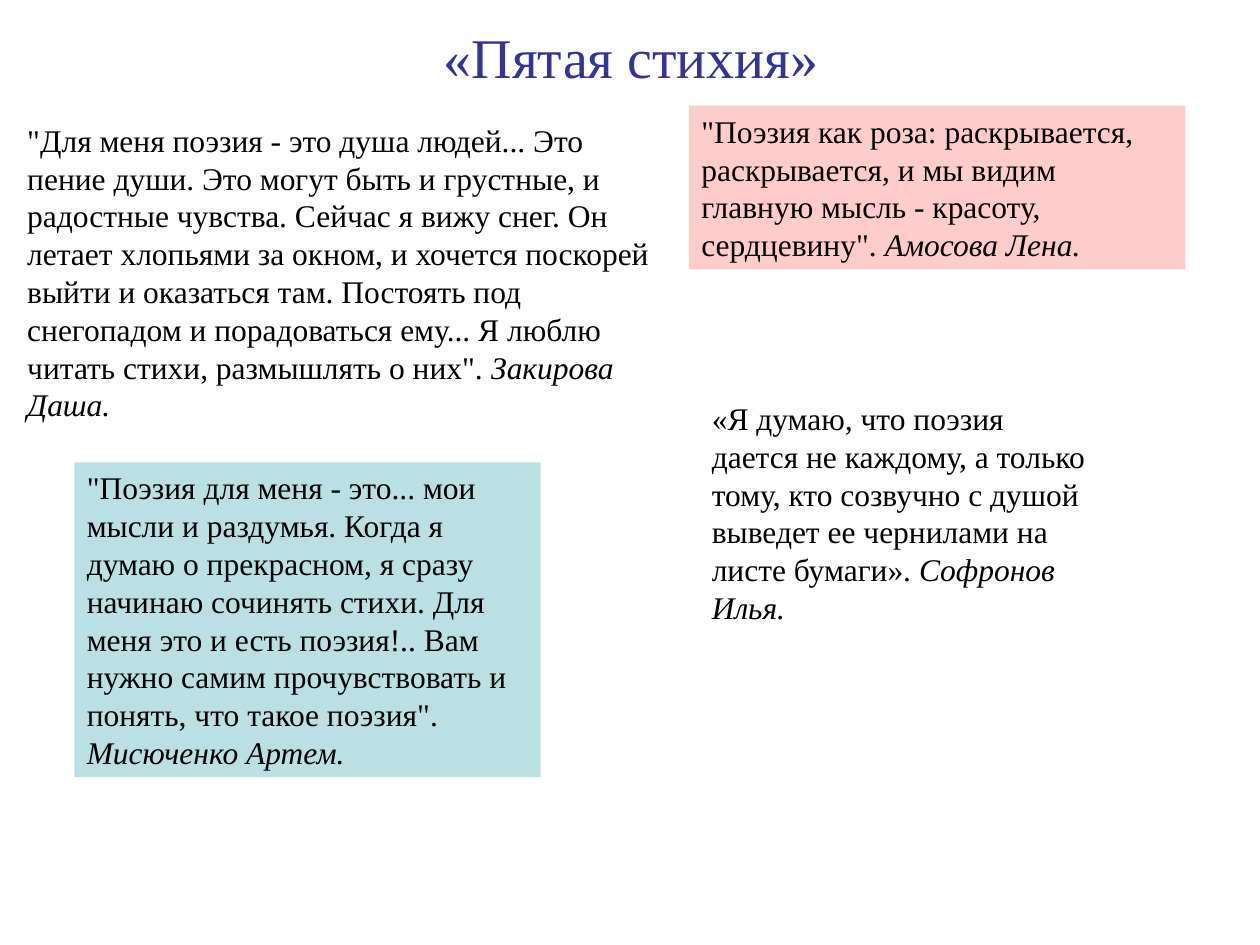
import pptx
import pptx.util
import pptx.dml.color
import pptx.enum.shapes
import pptx.enum.text
from dataclasses import dataclass

Cm = pptx.util.Cm
RGB = pptx.dml.color.RGBColor.from_string
Align = pptx.enum.text.PP_ALIGN
Anchor = pptx.enum.text.MSO_ANCHOR


@dataclass(frozen=True)
class Theme:
    """Fonts, type sizes and colours of the slide."""
    font: str = "Times New Roman"
    head: int = 32
    body: int = 18
    title: str = "333399"
    ink: str = "000000"
    rose: str = "FFCCCC"
    teal: str = "BBE0E3"
    white: str = "FFFFFF"


THEME = Theme()


def add_run(para, text, size, tint, slant=False):
    """Add one styled run to a paragraph."""
    run = para.add_run()
    run.text = text
    run.font.name = THEME.font
    run.font.size = pptx.util.Pt(size)
    run.font.italic = slant
    run.font.color.rgb = RGB(tint)


def add_title(slide, text, area):
    """Add the centred slide title."""
    frame = slide.shapes.add_textbox(*map(Cm, area)).text_frame
    frame.word_wrap = True
    frame.vertical_anchor = Anchor.MIDDLE
    para = frame.paragraphs[0]
    para.alignment = Align.CENTER
    add_run(para, text, THEME.head, THEME.title)


def add_quote(slide, text, name, area, fill=None):
    """Add a quote with its author in italics, on a filled box if asked."""
    place = [Cm(x) for x in area]
    if fill:
        kind = pptx.enum.shapes.MSO_SHAPE.RECTANGLE
        box = slide.shapes.add_shape(kind, *place)
        box.shadow.inherit = False
        box.fill.solid()
        box.fill.fore_color.rgb = RGB(fill)
        box.line.fill.background()
    else:
        box = slide.shapes.add_textbox(*place)
    frame = box.text_frame
    frame.word_wrap = True
    frame.auto_size = pptx.enum.text.MSO_AUTO_SIZE.SHAPE_TO_FIT_TEXT
    frame.vertical_anchor = Anchor.TOP
    para = frame.paragraphs[0]
    para.alignment = Align.LEFT
    add_run(para, text + " ", THEME.body, THEME.ink)
    add_run(para, name, THEME.body, THEME.ink, True)


def main():
    """Build and save the slide."""
    deck = pptx.Presentation()
    deck.slide_width, deck.slide_height = Cm(25.4), Cm(19.05)
    slide = deck.slides.add_slide(deck.slide_layouts[6])
    add_title(slide, "«Пятая стихия»", (1.3, 0.33, 22.86, 1.6))
    quotes = (
        ('"Для меня поэзия - это душа людей... Это пение души. Это могут быть '
         'и грустные, и радостные чувства. Сейчас я вижу снег. Он летает '
         'хлопьями за окном, и хочется поскорей выйти и оказаться там. '
         'Постоять под снегопадом и порадоваться ему... Я люблю читать стихи, '
         'размышлять о них".',
         "Закирова Даша.", (0.3, 2.31, 13.41, 6.35), None),
        ('"Поэзия как роза: раскрывается, раскрывается, и мы видим главную '
         'мысль - красоту, сердцевину".',
         "Амосова Лена.", (13.89, 2.13, 10.01, 3.3), THEME.rose),
        ('«Я думаю, что поэзия дается не каждому, а только тому, кто созвучно '
         'с душой выведет ее чернилами на листе бумаги».',
         "Софронов Илья.", (14.1, 7.92, 8.2, 4.83), THEME.white),
        ('"Поэзия для меня - это... мои мысли и раздумья. Когда я думаю о '
         'прекрасном, я сразу начинаю сочинять стихи. Для меня это и есть '
         'поэзия!.. Вам нужно самим прочувствовать и понять, что такое '
         'поэзия".',
         "Мисюченко Артем.", (1.5, 9.32, 9.4, 6.35), THEME.teal),
    )
    for quote in quotes:
        add_quote(slide, *quote)
    deck.save("out.pptx")


if __name__ == "__main__":
    main()
